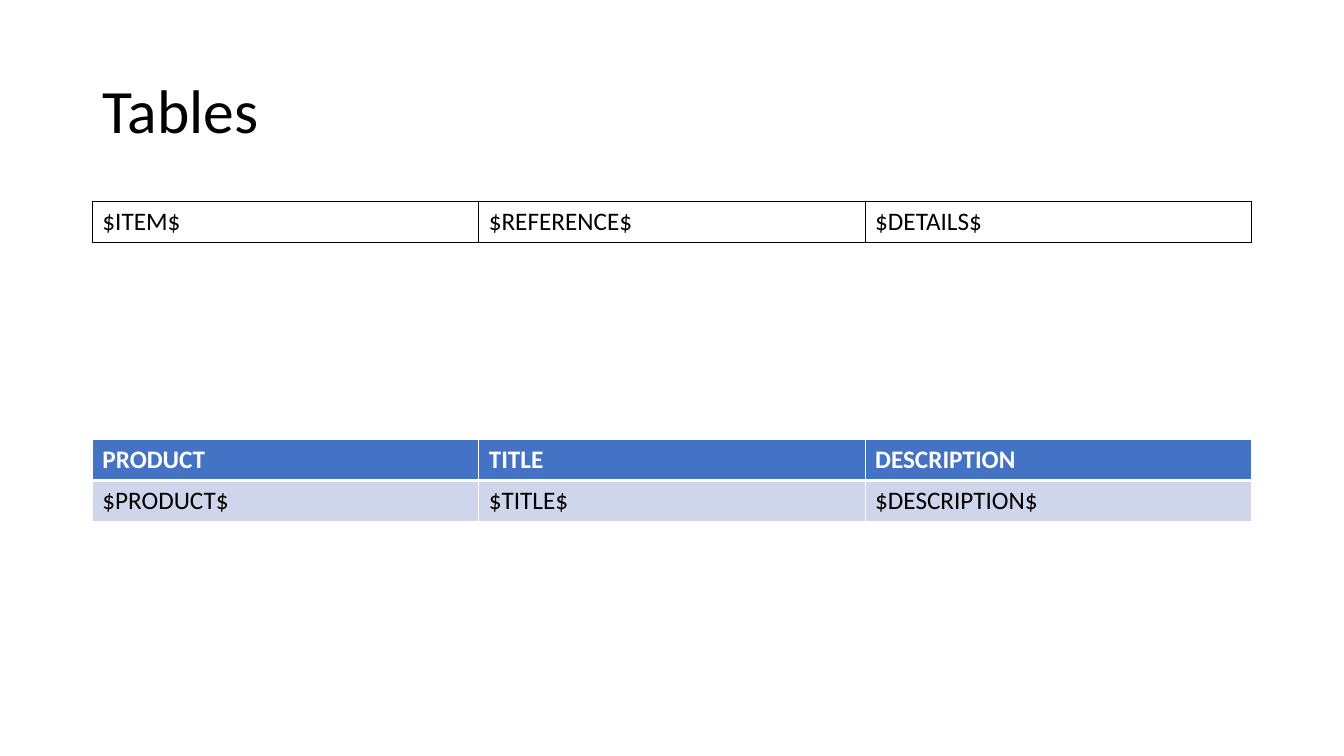
from lxml import etree
from pptx import Presentation
from pptx.dml.color import RGBColor
from pptx.enum.text import MSO_ANCHOR, PP_ALIGN
from pptx.oxml.ns import qn
from pptx.util import Pt

MIDDLE = MSO_ANCHOR.MIDDLE
LEFT_ALIGN = PP_ALIGN.LEFT

BLACK = RGBColor(0x00, 0x00, 0x00)
WHITE = RGBColor(0xFF, 0xFF, 0xFF)
HEADER_BLUE = RGBColor(0x44, 0x72, 0xC4)
BAND_BLUE = RGBColor(0xCF, 0xD5, 0xEA)

FONT = "Calibri"
TITLE_ONLY = 5
LEFT, WIDTH = 66, 828
ROW_HEIGHT = 29.2


def add_run(p, text, size, color, bold=False):
    r = p.add_run()
    r.text = text
    r.font.name = FONT
    r.font.size = Pt(size)
    r.font.bold = bold
    r.font.color.rgb = color


def set_title(slide, text):
    sp = slide.shapes.title
    sp.left, sp.top, sp.width, sp.height = Pt(LEFT), Pt(28.75), Pt(WIDTH), Pt(104.4)
    tf = sp.text_frame
    tf.vertical_anchor = MIDDLE
    p = tf.paragraphs[0]
    p.alignment = LEFT_ALIGN
    p.line_spacing = 0.9
    add_run(p, text, 44, BLACK)


def set_borders(cell, color, top=1, bottom=1):
    """Draw all four cell edges; must run before the fill is set."""
    tcPr = cell._tc.get_or_add_tcPr()
    for side, width in (("L", 1), ("R", 1), ("T", top), ("B", bottom)):
        ln = etree.SubElement(tcPr, qn(f"a:ln{side}"), w=str(Pt(width)))
        fill = etree.SubElement(ln, qn("a:solidFill"))
        etree.SubElement(fill, qn("a:srgbClr"), val=str(color))


def fill_cell(cell, text, color, fill=None, bold=False):
    if fill is None:
        cell.fill.background()
    else:
        cell.fill.solid()
        cell.fill.fore_color.rgb = fill
    add_run(cell.text_frame.paragraphs[0], text, 18, color, bold)


def add_table(slide, top, rows, columns):
    frame = slide.shapes.add_table(rows, columns, Pt(LEFT), Pt(top),
                                   Pt(WIDTH), Pt(ROW_HEIGHT * rows))
    table = frame.table
    table.horz_banding = False
    return table


def add_outlined_table(slide, top, texts):
    table = add_table(slide, top, 1, len(texts))
    table.first_row = False
    for cell, text in zip(table.iter_cells(), texts):
        set_borders(cell, BLACK)
        fill_cell(cell, text, BLACK)


def add_header_table(slide, top, headers, values):
    table = add_table(slide, top, 2, len(headers))
    for column, (header, value) in enumerate(zip(headers, values)):
        cell = table.cell(0, column)
        set_borders(cell, WHITE, bottom=3)
        fill_cell(cell, header, WHITE, HEADER_BLUE, bold=True)
        cell = table.cell(1, column)
        set_borders(cell, WHITE, top=3)
        fill_cell(cell, value, BLACK, BAND_BLUE)


def main():
    prs = Presentation()
    prs.slide_width, prs.slide_height = Pt(960), Pt(540)
    slide = prs.slides.add_slide(prs.slide_layouts[TITLE_ONLY])
    set_title(slide, "Tables")
    add_outlined_table(slide, 143.75, ["$ITEM$", "$REFERENCE$", "$DETAILS$"])
    add_header_table(slide, 314, ["PRODUCT", "TITLE", "DESCRIPTION"],
                     ["$PRODUCT$", "$TITLE$", "$DESCRIPTION$"])
    prs.save("out.pptx")


if __name__ == "__main__":
    main()
